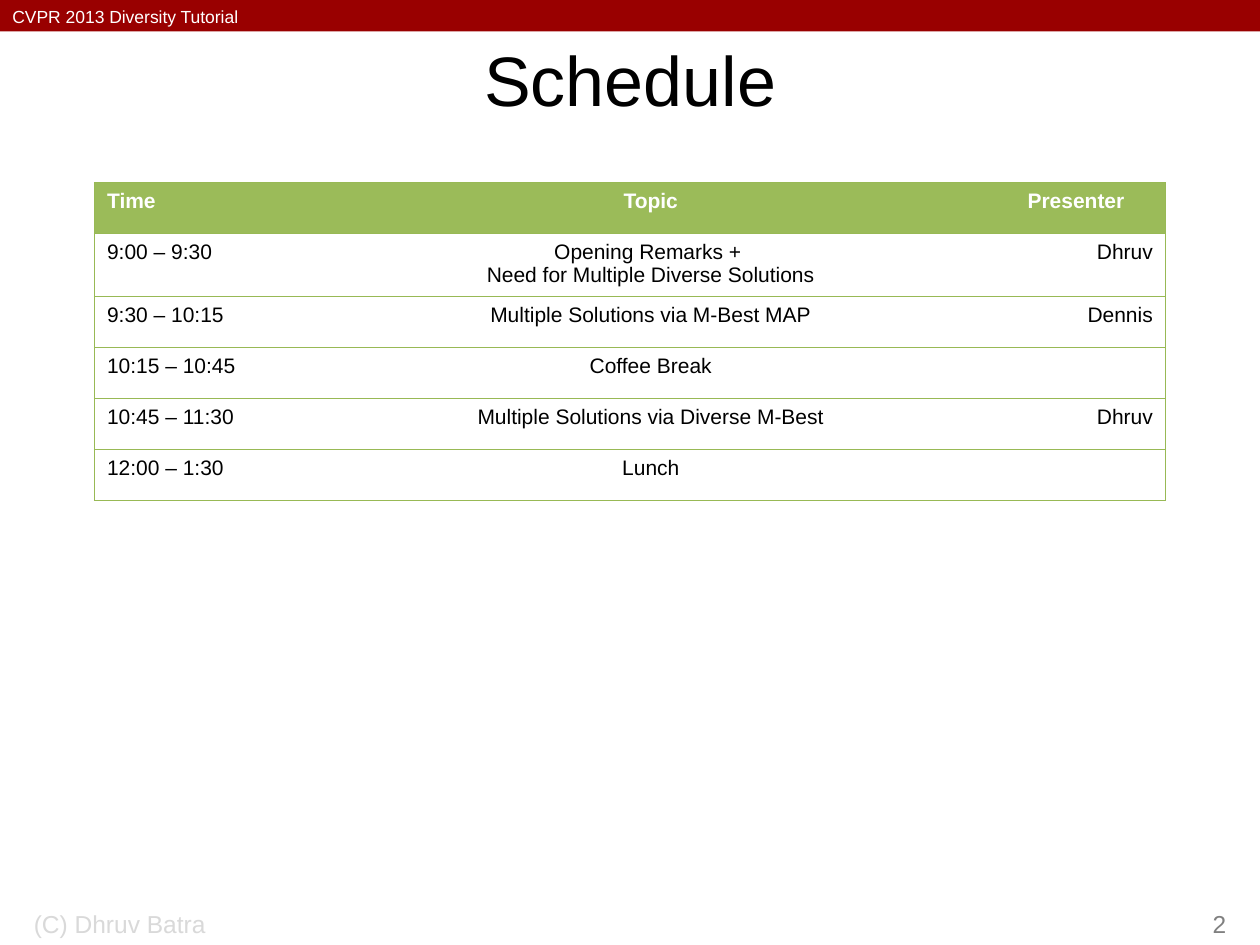
import pptx
import pptx.dml.color
import pptx.enum.shapes
import pptx.enum.text
import pptx.oxml
import pptx.oxml.ns
import pptx.util
from pptx.util import Inches

RGBColor = pptx.dml.color.RGBColor
ALIGN = pptx.enum.text.PP_ALIGN
ANCHOR = pptx.enum.text.MSO_ANCHOR

RED = RGBColor(0x99, 0x00, 0x00)
GREEN = RGBColor(0x9B, 0xBB, 0x59)
BORDER_GREEN = RGBColor(0x98, 0xB9, 0x55)
WHITE = RGBColor(0xFF, 0xFF, 0xFF)
BLACK = RGBColor(0x00, 0x00, 0x00)
LIGHT_GRAY = RGBColor(0xD9, 0xD9, 0xD9)
GRAY = RGBColor(0x80, 0x80, 0x80)

COLUMN_WIDTHS = (1.75, 5.33, 1.42)
SCHEDULE = (
    ("Time", "Topic", "Presenter"),
    ("9:00 – 9:30", "Opening Remarks + \vNeed for Multiple Diverse Solutions", "Dhruv"),
    ("9:30 – 10:15", "Multiple Solutions via M-Best MAP", "Dennis"),
    ("10:15 – 10:45", "Coffee Break", ""),
    ("10:45 – 11:30", "Multiple Solutions via Diverse M-Best", "Dhruv"),
    ("12:00 – 1:30", "Lunch", ""),
)


def write(text_frame, text, size, color, align=ALIGN.LEFT, bold=False):
    text_frame.text = text
    for paragraph in text_frame.paragraphs:
        paragraph.alignment = align
        for run in paragraph.runs:
            run.font.name = "Arial"
            run.font.size = pptx.util.Pt(size)
            run.font.color.rgb = color
            run.font.bold = bold


def add_text_box(slide, box, text, size, color, align=ALIGN.LEFT,
                 anchor=ANCHOR.TOP, wrap=True):
    text_frame = slide.shapes.add_textbox(*box).text_frame
    text_frame.word_wrap = wrap
    text_frame.vertical_anchor = anchor
    write(text_frame, text, size, color, align)


def add_header_bar(slide, left, top, width, height):
    bar = slide.shapes.add_shape(
        pptx.enum.shapes.MSO_SHAPE.RECTANGLE, left, top, width, height)
    bar.shadow.inherit = False
    bar.fill.solid()
    bar.fill.fore_color.rgb = RED
    bar.line.fill.background()
    add_text_box(slide, (left, top, Inches(2.06), Inches(0.27)),
                 "CVPR 2013 Diversity Tutorial", 10, WHITE, wrap=False)


def place_title(slide, left, top, width, height):
    title = slide.shapes.title
    title.left, title.top, title.width, title.height = left, top, width, height
    title.text_frame.vertical_anchor = ANCHOR.MIDDLE
    write(title.text_frame, "Schedule", 40, BLACK, ALIGN.CENTER)


def set_borders(cell, visible_sides):
    """Draw the given sides (of L, R, T, B) in green and hide the others."""
    properties = cell._tc.get_or_add_tcPr()
    for position, side in enumerate("LRTB"):
        fill = "<a:noFill/>"
        if side in visible_sides:
            fill = f'<a:solidFill><a:srgbClr val="{BORDER_GREEN}"/></a:solidFill>'
        line = pptx.oxml.parse_xml(
            f'<a:ln{side} {pptx.oxml.ns.nsdecls("a")} w="{pptx.util.Pt(0.75)}">'
            f"{fill}</a:ln{side}>")
        properties.insert(position, line)


def add_schedule(slide, left, top, width, height):
    table = slide.shapes.add_table(
        len(SCHEDULE), len(COLUMN_WIDTHS), left, top, width, height).table
    table.horz_banding = False
    for column, column_width in zip(table.columns, COLUMN_WIDTHS):
        column.width = Inches(column_width)

    for row_index, entries in enumerate(SCHEDULE):
        is_header = row_index == 0
        last_align = ALIGN.CENTER if is_header else ALIGN.RIGHT
        aligns = (ALIGN.LEFT, ALIGN.CENTER, last_align)
        for column_index, (text, align) in enumerate(zip(entries, aligns)):
            cell = table.cell(row_index, column_index)
            cell.fill.solid()
            cell.fill.fore_color.rgb = GREEN if is_header else WHITE
            write(cell.text_frame, text, 12, WHITE if is_header else BLACK,
                  align, bold=is_header)
            set_borders(cell, ("LTB", "TB", "RTB")[column_index])


def add_footer(slide, left, top, width, height):
    number_width = Inches(2.08)
    add_text_box(slide, (left, top, Inches(3.17), height), "(C) Dhruv Batra",
                 14, LIGHT_GRAY, anchor=ANCHOR.BOTTOM)
    add_text_box(slide, (left + width - number_width, top, number_width, height),
                 "2", 14, GRAY, ALIGN.RIGHT, ANCHOR.BOTTOM)


def main():
    presentation = pptx.Presentation()
    presentation.slide_width = Inches(10)
    presentation.slide_height = Inches(7.5)
    slide = presentation.slides.add_slide(
        presentation.slide_layouts.get_by_name("Title Only"))
    add_header_bar(slide, 0, 0, presentation.slide_width, Inches(0.25))
    place_title(slide, Inches(0.75), Inches(0.25), Inches(8.5), Inches(0.75))
    add_schedule(slide, Inches(0.75), Inches(1.45), Inches(8.5), Inches(2.43))
    add_footer(slide, Inches(0.17), Inches(7), Inches(9.66), Inches(0.5))
    presentation.save("out.pptx")


if __name__ == "__main__":
    main()
